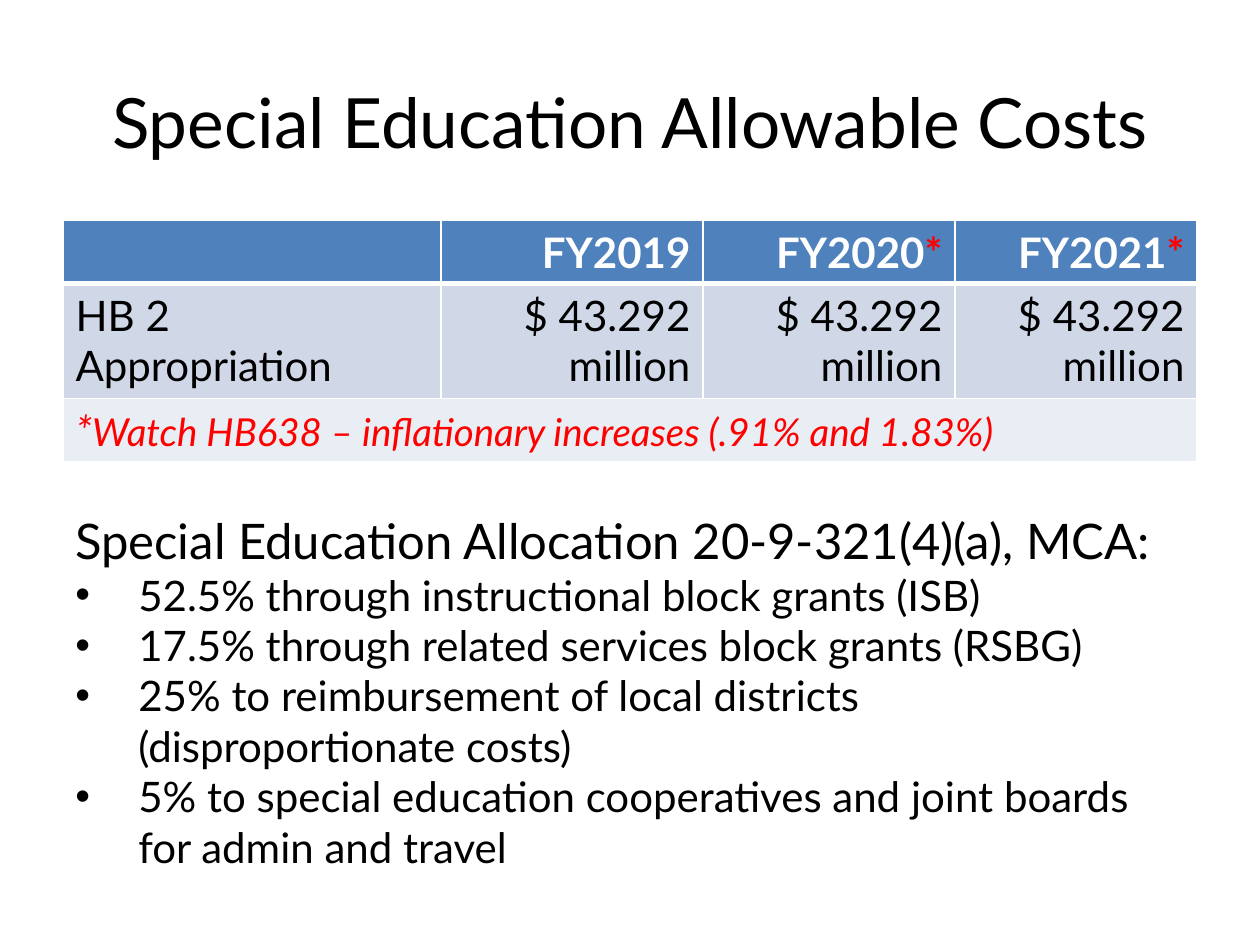
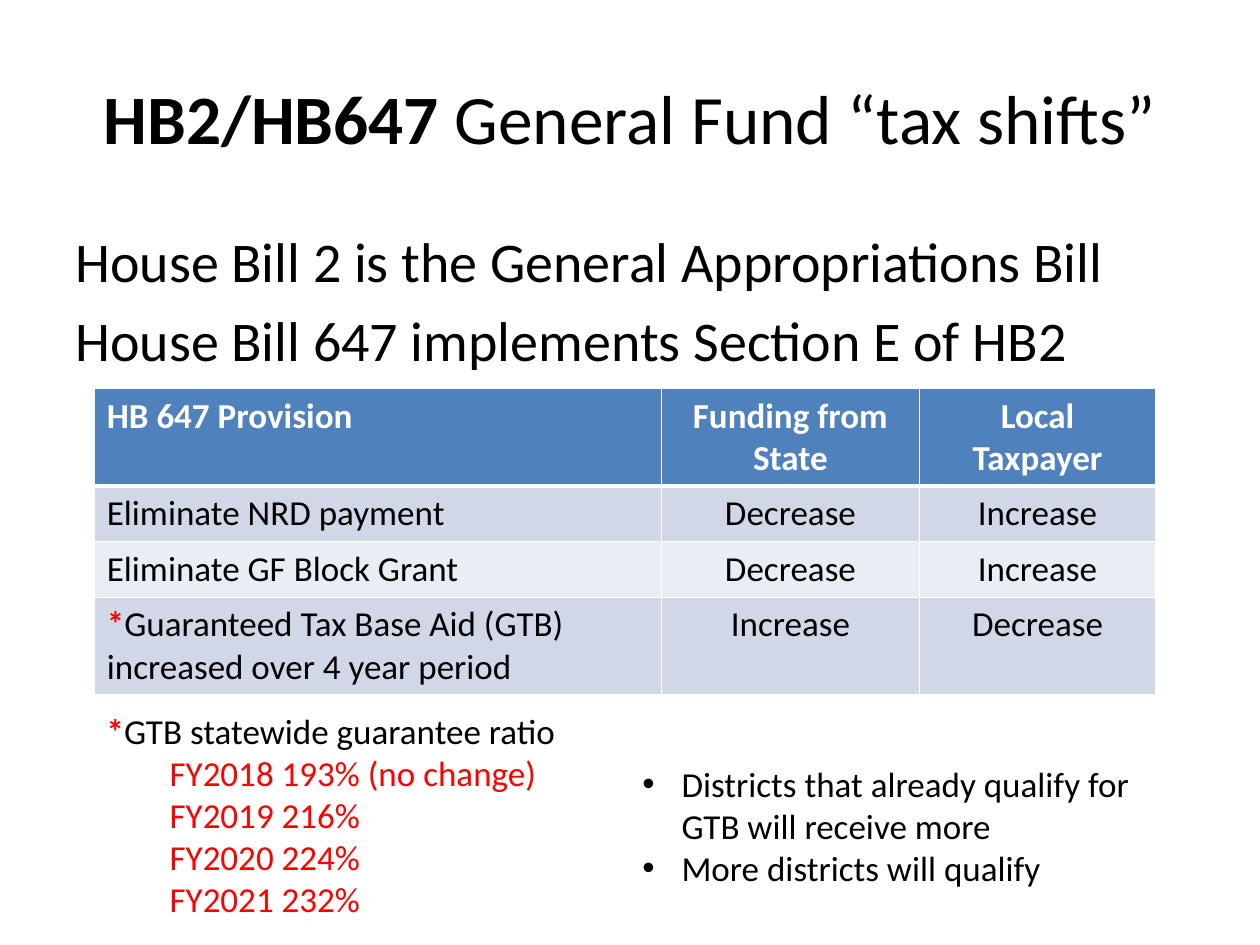
"""Build two slides on special education costs and general fund tax shifts."""
from lxml.etree import SubElement
from pptx import Presentation
from pptx.dml.color import RGBColor
from pptx.enum.text import MSO_ANCHOR, PP_ALIGN
from pptx.oxml.ns import qn
from pptx.util import Cm, Pt


class Theme:
    black, white, red = "000000", "FFFFFF", "FF0000"
    head, bands = "4F81BD", ("D0D8E8", "E9EDF4")
    lato, plain = "Lato", "Calibri"
    title, lead, intro, large, note, small = 39.6, 32, 28, 24, 22, 20
    thin, thick = Pt(1), Pt(3)


def put(par, text, font, size, color=Theme.black, bold=False,
        align=PP_ALIGN.LEFT, mark="*", hue=Theme.red):
    """Write one paragraph, with its mark bold and in its own hue."""
    parts = [part for part in text.partition(mark) if part]
    par.text = parts[0] if parts else ""
    for part in parts[1:]:
        par.add_run().text = part
    par.alignment = align
    par.font.size = Pt(size)
    for run in par.runs:
        hit = run.text == mark
        run.font.name, run.font.size = font, Pt(size)
        run.font.bold = bold or hit
        run.font.color.rgb = RGBColor.from_string(hue if hit else color)


def box(slide, spot, lines, font, size, left=0, hang=0, gap=0, **look):
    """Add a text box; lines after a lead line may be indented or bulleted."""
    frame = slide.shapes.add_textbox(*map(Cm, spot)).text_frame
    frame.word_wrap = True
    for num, line in enumerate(lines):
        par = frame.add_paragraph() if num else frame.paragraphs[0]
        put(par, line, font, size, **look)
        par.space_before = Pt(gap)
        props = par._p.get_or_add_pPr()
        props.set("marL", str(Cm(left)))
        props.set("indent", str(Cm(-hang)))
        if hang:
            SubElement(props, qn("a:buFont")).set("typeface", "Arial")
            SubElement(props, qn("a:buChar")).set("char", "•")
    return frame


deck = Presentation()
deck.slide_width, deck.slide_height = Cm(25.4), Cm(19.05)
costs, shifts = [deck.slides.add_slide(deck.slide_layouts[6]) for _ in range(2)]
edge, wide = 1.27, 22.86

titles = [
    (costs, 0.84, "Special Education Allowable Costs", Theme.lato),
    (shifts, 0.76, "HB2/HB647 General Fund “tax shifts”", Theme.plain),
]
for slide, top, text, font in titles:
    frame = box(slide, (edge, top, wide, 3.18), [text], font, Theme.title,
                align=PP_ALIGN.CENTER, mark="HB2/HB647", hue=Theme.black)
    frame.vertical_anchor = MSO_ANCHOR.MIDDLE

sum_text = "$ 43.292 million"
cost_rows = [
    ["", "FY2019", "FY2020*", "FY2021*"],
    ["HB 2 Appropriation"] + [sum_text] * 3,
    [""] * 4,
]
shift_rows = [
    ["HB 647 Provision", "Funding from State", "Local Taxpayer"],
    ["Eliminate NRD payment", "Decrease", "Increase"],
    ["Eliminate GF Block Grant", "Decrease", "Increase"],
    ["*Guaranteed Tax Base Aid (GTB) increased over 4 year period",
     "Increase", "Decrease"],
]
tables = [
    (costs, edge, 4.45, [7.62, 5.28, 5.08, 4.88], [1.25, 2.31, 1.25],
     cost_rows, Theme.lato, Theme.large, PP_ALIGN.RIGHT),
    (shifts, 1.9, 7.83, [11.43, 5.21, 4.75], [1.97, 1.12, 1.12, 1.97],
     shift_rows, Theme.plain, Theme.small, PP_ALIGN.CENTER),
]
grids = []
for slide, left, top, cols, highs, rows, font, size, align in tables:
    grid = slide.shapes.add_table(
        len(rows), len(cols), Cm(left), Cm(top), Cm(sum(cols)), Cm(sum(highs))).table
    grids.append(grid)
    for col, width in zip(grid.columns, cols):
        col.width = Cm(width)
    for row, high in zip(grid.rows, highs):
        row.height = Cm(high)
    for r, texts in enumerate(rows):
        for c, text in enumerate(texts):
            cell = grid.cell(r, c)
            put(cell.text_frame.paragraphs[0], text, font, size,
                Theme.black if r else Theme.white, r == 0,
                align if c else PP_ALIGN.LEFT)
            props = cell._tc.get_or_add_tcPr()
            for side in "LRTB":
                bold = (r, side) in ((0, "B"), (1, "T"))
                line = SubElement(props, qn("a:ln" + side))
                line.set("w", str(Theme.thick if bold else Theme.thin))
                fill = SubElement(line, qn("a:solidFill"))
                SubElement(fill, qn("a:srgbClr")).set("val", Theme.white)
            cell.fill.solid()
            cell.fill.fore_color.rgb = RGBColor.from_string(
                Theme.bands[(r - 1) % 2] if r else Theme.head)

foot = grids[0].cell(2, 0)
foot.merge(grids[0].cell(2, 3))
par = foot.text_frame.paragraphs[0]
put(par, "*Watch HB638 – inflationary increases (.91% and 1.83%)",
    Theme.lato, Theme.note, Theme.red)
for run in par.runs:
    run.font.italic, run.font.bold = True, False
par.runs[0].font.size = Pt(Theme.large)

frame = box(costs, (edge, 10.16, wide, 7.62), [
    "Special Education Allocation 20-9-321(4)(a), MCA:",
    "52.5% through instructional block grants (ISB)",
    "17.5% through related services block grants (RSBG)",
    "25% to reimbursement of local districts (disproportionate costs)",
    "5% to special education cooperatives and joint boards for admin and travel",
], Theme.lato, Theme.large, left=1.27, hang=1.27)
lead = frame.paragraphs[0]
lead.runs[0].font.size = Pt(Theme.intro)
props = lead._p.get_or_add_pPr()
props.set("marL", "0")
props.set("indent", "0")
for tag in ("a:buFont", "a:buChar"):
    props.remove(props.find(qn(tag)))

box(shifts, (edge, 4.45, wide, 3.18), [
    "House Bill 2 is the General Appropriations Bill",
    "House Bill 647 implements Section E of HB2",
], Theme.plain, Theme.lead, gap=6.4)

ratios = [("2018", "193% (no change)"), ("2019", "216%"),
          ("2020", "224%"), ("2021", "232%")]
frame = box(shifts, (1.9, 14.17, 9.96, 4.52), ["*GTB statewide guarantee ratio"],
            Theme.plain, Theme.small)
for year, rate in ratios:
    par = frame.add_paragraph()
    put(par, f"FY{year} {rate}", Theme.plain, Theme.small, Theme.red)
    par.level = 1
    par._p.get_or_add_pPr().set("marL", str(Cm(1.27)))

box(shifts, (12.7, 15.24, 10.8, 2.82), [
    "Districts that already qualify for GTB will receive more",
    "More districts will qualify",
], Theme.plain, Theme.small, left=0.79, hang=0.79)

deck.save("out.pptx")
